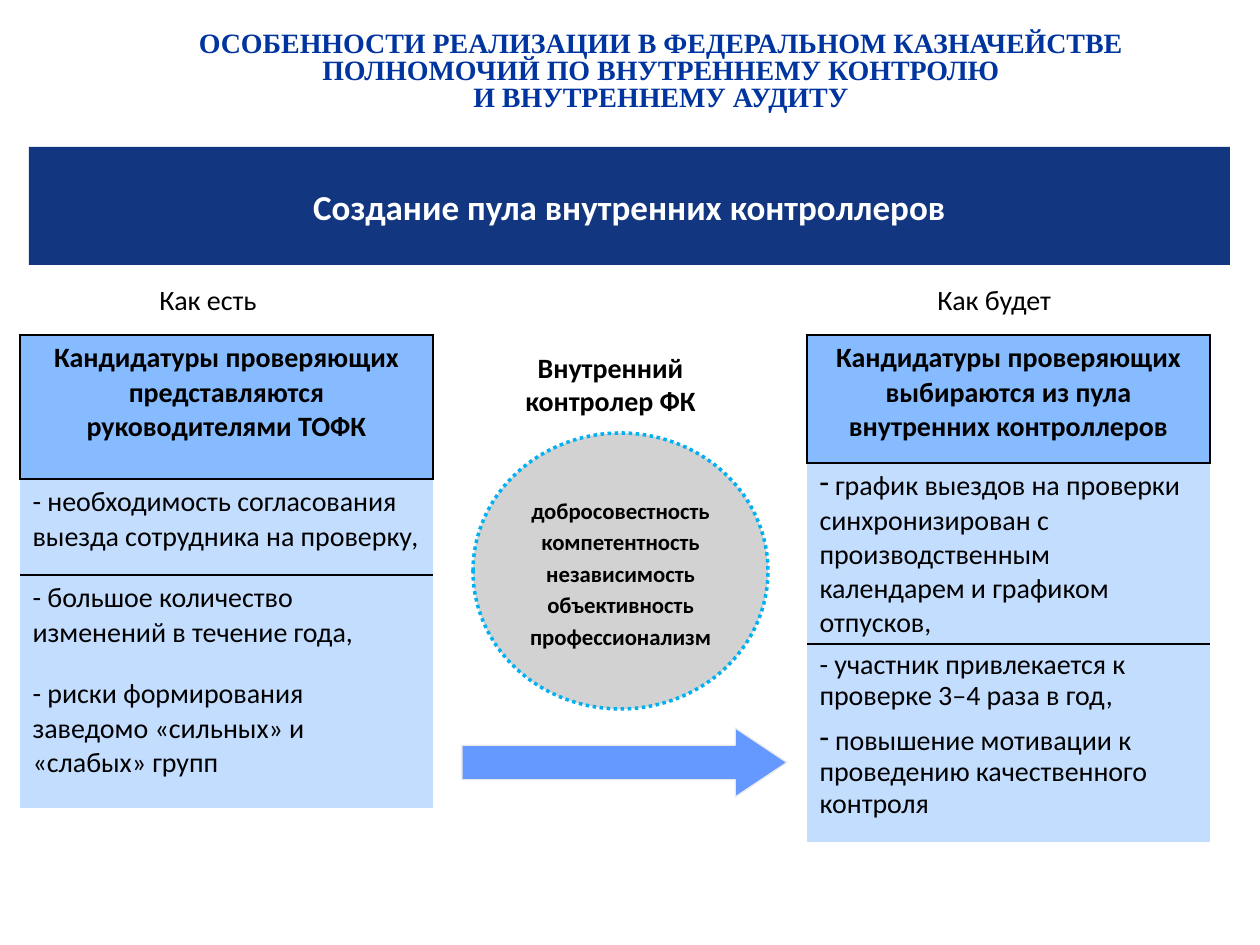
from lxml.etree import SubElement as Sub
from pptx import Presentation
from pptx.dml.color import RGBColor as RGB
from pptx.enum.dml import MSO_LINE as Dash
from pptx.enum.shapes import MSO_SHAPE as Kind
from pptx.enum.text import MSO_ANCHOR as Anchor, PP_ALIGN as Align
from pptx.oxml import parse_xml
from pptx.oxml.ns import nsdecls, qn
from pptx.util import Pt

PX = 914400 // 126
HUES = {
    "navy": "002776", "title": "00349E", "head": "87BBFF", "body": "C3DDFF",
    "arrow": "6699FF", "edge": "EAEAEA", "disc": "D2D2D2", "ring": "00B0F0",
    "black": "000000", "white": "FFFFFF",
}


def hue(name):
    return RGB.from_string(HUES[name])


class Deck:
    def __init__(self, wide, high):
        self.prs = Presentation()
        self.prs.slide_width, self.prs.slide_height = wide * PX, high * PX
        self.slide = self.prs.slides.add_slide(self.prs.slide_layouts[6])
        self.font = "Calibri"

    def put(self, frame, lines, size=16, color="black", bold=False,
            align=Align.LEFT, space=None, font=None):
        """Fill a text frame; a line that starts with "•" gets a dash bullet."""
        for i, line in enumerate(lines):
            para = frame.add_paragraph() if i else frame.paragraphs[0]
            para.text = line.removeprefix("•")
            para.alignment = align
            if space:
                para.line_spacing = space
            if line.startswith("•"):
                props = para._p.get_or_add_pPr()
                props.set("marL", "0")
                props.set("indent", "0")
                Sub(props, qn("a:buChar")).set("char", "-")
            para.font.name = font or self.font
            para.font.size, para.font.bold = Pt(size), bold
            para.font.color.rgb = hue(color)

    def text(self, box, lines, wrap=False, **style):
        area = self.slide.shapes.add_textbox(*(n * PX for n in box))
        area.text_frame.word_wrap = wrap
        self.put(area.text_frame, lines, **style)

    def shape(self, kind, box, fill, lines=(), alpha=None, edge=None,
              width=1, dash=None, **style):
        form = self.slide.shapes.add_shape(kind, *(n * PX for n in box))
        form.shadow.inherit = False
        form.fill.solid()
        form.fill.fore_color.rgb = hue(fill)
        if alpha:
            color = form.fill._xPr.find(".//" + qn("a:srgbClr"))
            Sub(color, qn("a:alpha")).set("val", str(alpha * 1000))
        if edge:
            form.line.color.rgb = hue(edge)
            form.line.width = Pt(width)
            if dash:
                form.line.dash_style = dash
        else:
            form.line.fill.background()
        form.text_frame.vertical_anchor = Anchor.MIDDLE
        self.put(form.text_frame, lines, align=Align.CENTER, **style)
        return form

    def edges(self, cell, sides):
        """Draw the named sides of a cell in black and clear the others."""
        props = cell._tc.get_or_add_tcPr()
        for i, side in enumerate("LRTB"):
            paint = "<a:noFill/>"
            if side in sides:
                paint = f'<a:solidFill><a:srgbClr val="{HUES["black"]}"/></a:solidFill>'
            props.insert(i, parse_xml(
                f'<a:ln{side} {nsdecls("a")} w="12700">{paint}</a:ln{side}>'))

    def table(self, box, rows):
        """Rows are (height, lines, line spacing); the first one is the head."""
        frame = self.slide.shapes.add_table(len(rows), 1, *(n * PX for n in box))
        grid = frame.table
        grid.first_row = grid.horz_banding = False
        sides = ("LRTB", "TB", "T", "")
        for i, (high, lines, space) in enumerate(rows):
            grid.rows[i].height = high * PX
            cell = grid.cell(i, 0)
            cell.fill.solid()
            cell.fill.fore_color.rgb = hue("body" if i else "head")
            self.edges(cell, sides[i])
            self.put(cell.text_frame, lines, bold=not i, space=space,
                     align=Align.LEFT if i else Align.CENTER)


def main():
    deck = Deck(1260, 945)
    deck.shape(Kind.RECTANGLE, (29, 147, 1201, 118), "navy",
               ["Создание пула внутренних контроллеров"],
               alpha=93, size=20, color="white", bold=True)

    deck.table((20, 335, 413, 473), [
        (144, ["Кандидатуры проверяющих",
               "представляются руководителями ТОФК"], None),
        (96, ["- необходимость согласования выезда сотрудника на проверку,"], None),
        (96, ["- большое количество изменений в течение года,"], None),
        (137, ["- риски формирования заведомо «сильных» и «слабых» групп"], None),
    ])
    deck.text((147, 276, 137, 50), ["Как есть"])

    deck.table((807, 335, 403, 507), [
        (128, ["Кандидатуры проверяющих",
               "выбираются из пула внутренних контроллеров"], None),
        (181, ["• график выездов на проверки\nсинхронизирован с "
               "производственным календарем и графиком отпусков,"], None),
        (76, ["- участник привлекается к проверке 3–4 раза в год,"], Pt(18)),
        (122, ["• повышение мотивации к проведению качественного контроля"], Pt(18)),
    ])
    deck.text((925, 276, 141, 47), ["Как будет"])

    deck.shape(Kind.OVAL, (473, 433, 295, 276), "disc",
               ["добросовестность", "компетентность", "независимость",
                "объективность", "профессионализм"],
               edge="ring", width=2, dash=Dash.ROUND_DOT,
               size=13, bold=True, space=Pt(18))
    deck.text((501, 344, 219, 89), ["Внутренний", "контролер ФК"],
              bold=True, align=Align.CENTER)
    arrow = deck.shape(Kind.RIGHT_ARROW, (462, 728, 325, 69), "arrow",
                       edge="edge", width=0.75)
    arrow.adjustments[0], arrow.adjustments[1] = 0.5, 0.75

    deck.text((164, 26, 994, 93),
              ["ОСОБЕННОСТИ РЕАЛИЗАЦИИ В ФЕДЕРАЛЬНОМ КАЗНАЧЕЙСТВЕ "
               "ПОЛНОМОЧИЙ ПО ВНУТРЕННЕМУ КОНТРОЛЮ", "И ВНУТРЕННЕМУ АУДИТУ"],
              wrap=True, color="title", bold=True, align=Align.CENTER,
              space=0.8, font="Times New Roman")
    deck.prs.save("out.pptx")


if __name__ == "__main__":
    main()
